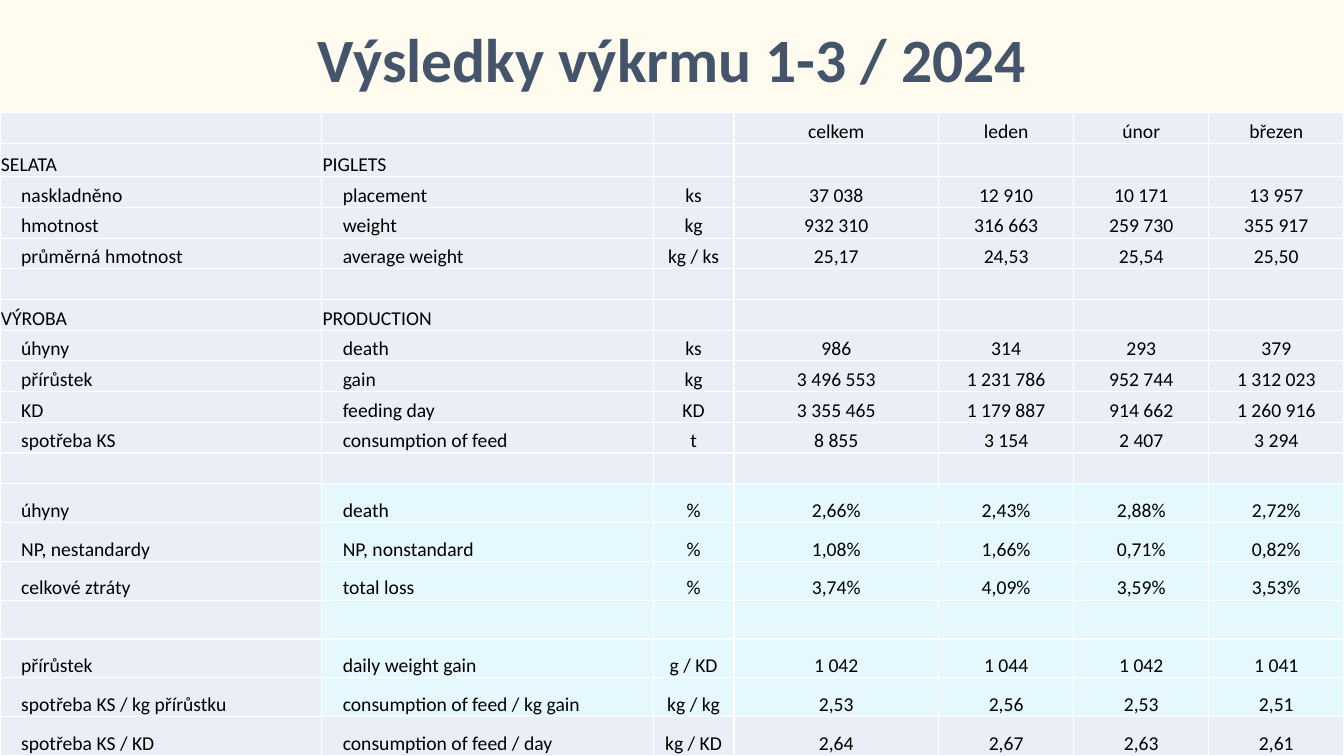
"""Build the slide with the pig fattening results table for January to March 2024."""
from lxml import etree
from pptx import Presentation
from pptx.dml.color import RGBColor
from pptx.enum.text import MSO_ANCHOR, PP_ALIGN
from pptx.oxml.ns import qn
from pptx.util import Inches, Pt

LEFT, CENTER = PP_ALIGN.LEFT, PP_ALIGN.CENTER
MIDDLE, BOTTOM = MSO_ANCHOR.MIDDLE, MSO_ANCHOR.BOTTOM
W, H = 13.33, 7.5
TABLE_TOP, LOWER_TOP = 1.12, 4.8
PALE_BLUE, PALE_CYAN = "EAEFF7", "E5F8FD"
UPPER_ROWS, LOWER_ROWS = 12, 7
HEADING_ROWS = (1, 6)
EMPTY = [""] * 7

ROWS = [
    ["", "", "", "celkem", "leden", "únor", "březen"],
    ["SELATA", "PIGLETS", "", "", "", "", ""],
    ["naskladněno", "placement", "ks", "37 038", "12 910", "10 171", "13 957"],
    ["hmotnost", "weight", "kg", "932 310", "316 663", "259 730", "355 917"],
    ["průměrná hmotnost", "average weight", "kg / ks", "25,17", "24,53", "25,54", "25,50"],
    EMPTY,
    ["VÝROBA", "PRODUCTION", "", "", "", "", ""],
    ["úhyny", "death", "ks", "986", "314", "293", "379"],
    ["přírůstek", "gain", "kg", "3 496 553", "1 231 786", "952 744", "1 312 023"],
    ["KD", "feeding day", "KD", "3 355 465", "1 179 887", "914 662", "1 260 916"],
    ["spotřeba KS", "consumption of feed", "t", "8 855", "3 154", "2 407", "3 294"],
    EMPTY,
    ["úhyny", "death", "%", "2,66%", "2,43%", "2,88%", "2,72%"],
    ["NP, nestandardy", "NP, nonstandard", "%", "1,08%", "1,66%", "0,71%", "0,82%"],
    ["celkové ztráty", "total loss", "%", "3,74%", "4,09%", "3,59%", "3,53%"],
    EMPTY,
    ["přírůstek", "daily weight gain", "g / KD", "1 042", "1 044", "1 042", "1 041"],
    ["spotřeba KS / kg přírůstku", "consumption of feed / kg gain", "kg / kg",
     "2,53", "2,56", "2,53", "2,51"],
    ["spotřeba KS / KD", "consumption of feed / day", "kg / KD",
     "2,64", "2,67", "2,63", "2,61"],
]


def color(hex_value):
    return RGBColor.from_string(hex_value)


def write(tf, text, size=14, fill="000000", bold=False, align=LEFT, spacing=1.0):
    p = tf.paragraphs[0]
    p.alignment, p.line_spacing = align, spacing
    if not text:
        etree.SubElement(p._p, qn("a:endParaRPr"), sz=str(size * 100))
        return
    r = p.add_run()
    r.text = text
    r.font.name, r.font.size, r.font.bold = "Calibri", Pt(size), bold
    r.font.color.rgb = color(fill)


prs = Presentation()
prs.slide_width, prs.slide_height = Inches(W), Inches(H)
s = prs.slides.add_slide(prs.slide_layouts[6])
s.background.fill.solid()
s.background.fill.fore_color.rgb = color("FFFBEF")

title = s.shapes.add_textbox(Inches(0.92), Inches(0.13), Inches(11.5), Inches(0.99))
tf = title.text_frame
tf.word_wrap, tf.vertical_anchor = True, MIDDLE
write(tf, "Výsledky výkrmu 1-3 / 2024", size=44, fill="44546A", bold=True,
      align=CENTER, spacing=0.9)

wide = [3.19, 3.29, 0.8, 2.03]
col_widths = wide + [(W - sum(wide)) / 3] * 3
first_heading = 0.33
upper = (LOWER_TOP - TABLE_TOP - first_heading) / (UPPER_ROWS - 1)
lower = (H - LOWER_TOP) / LOWER_ROWS
row_heights = [upper, first_heading] + [upper] * (UPPER_ROWS - 2) + [lower] * LOWER_ROWS

frame = s.shapes.add_table(len(ROWS), len(col_widths), 0, Inches(TABLE_TOP),
                           Inches(W), Inches(H - TABLE_TOP))
table = frame.table
table.first_row = table.horz_banding = False
for column, width in zip(table.columns, col_widths):
    column.width = Inches(width)
for row, height in zip(table.rows, row_heights):
    row.height = Inches(height)

for i, values in enumerate(ROWS):
    for j, text in enumerate(values):
        cell = table.cell(i, j)
        indented = j < 2 and i not in HEADING_ROWS
        cell.margin_left = Inches(0.21 if indented else 0.01)
        cell.margin_right = cell.margin_top = Inches(0.01)
        cell.margin_bottom = 0
        cell.vertical_anchor = BOTTOM
        write(cell.text_frame, text, align=LEFT if j < 2 else CENTER)
        for side in ("a:lnL", "a:lnR", "a:lnT", "a:lnB"):
            ln = etree.SubElement(cell._tc.get_or_add_tcPr(), qn(side), w=str(Pt(1)))
            line_fill = etree.SubElement(ln, qn("a:solidFill"))
            etree.SubElement(line_fill, qn("a:srgbClr"), val="FFFFFF")
        cyan = j > 0 and UPPER_ROWS <= i < len(ROWS) - 1
        cell.fill.solid()
        cell.fill.fore_color.rgb = color(PALE_CYAN if cyan else PALE_BLUE)

prs.save("out.pptx")
